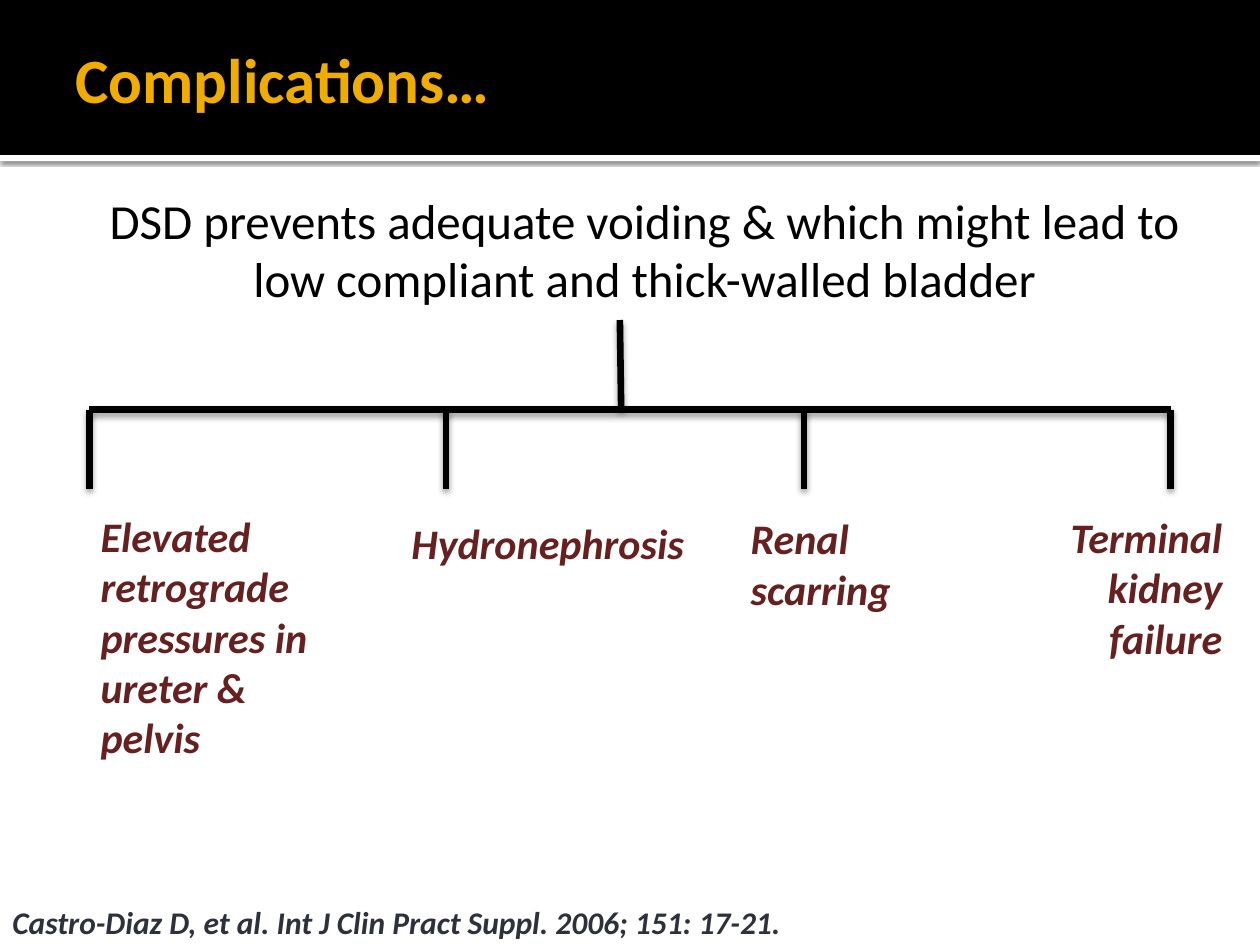
from lxml.etree import SubElement
from pptx import Presentation
from pptx.dml.color import RGBColor
from pptx.enum.shapes import MSO_CONNECTOR, MSO_SHAPE
from pptx.enum.text import MSO_ANCHOR, PP_ALIGN
from pptx.oxml.ns import qn
from pptx.util import Inches, Pt

TITLE = "Complications…"
CAUSE = "DSD prevents adequate voiding & which might lead to low compliant and thick-walled bladder"
CITATION = "Castro-Diaz D, et al. Int J Clin Pract Suppl. 2006; 151: 17-21."
# text, box (left, top, width, height), alignment
OUTCOMES = [
    ("Elevated retrograde pressures in ureter & pelvis", (0.2, 4, 2.36, 2.12), PP_ALIGN.LEFT),
    ("Hydronephrosis ", (2.56, 4.06, 3.15, 0.5), PP_ALIGN.CENTER),
    ("Renal scarring", (5.36, 4.02, 2.36, 0.91), PP_ALIGN.LEFT),
    ("Terminal kidney failure", (7.44, 4.01, 2.36, 1.31), PP_ALIGN.RIGHT),
]
BRANCH_LEFTS = [0.71, 3.54, 6.38, 9.29]
STEM_TOP, RAIL_TOP, BRANCH_BOTTOM = 2.54, 3.25, 3.88
OUTCOME_INDENT = 0.5

THEME = {
    "black": RGBColor.from_string("000000"),
    "white": RGBColor.from_string("FFFFFF"),
    "line_width": Pt(3.78),
    "title": {"size": Pt(36), "bold": True, "color": "F0AD00"},
    "cause": {"size": Pt(28), "color": "000000"},
    "outcome": {"size": Pt(24), "bold": True, "italic": True, "color": "672020"},
    "citation": {"size": Pt(18), "bold": True, "italic": True, "color": "2D313C"},
    # opacity in percent, blur and distance in points
    "rule_shadow": (60, 2.5, 0.8),
    "line_shadow": (38, 3.5, 2),
}


def inches(values):
    return [Inches(value) for value in values]


def add_shadow(shape, opacity, blur, distance):
    """Give the shape a black shadow that falls straight down."""
    effects = SubElement(shape._element.spPr, qn("a:effectLst"))
    shadow = SubElement(effects, qn("a:outerShdw"), {
        "blurRad": str(Pt(blur)), "dist": str(Pt(distance)),
        "dir": "5400000", "rotWithShape": "0"})
    color = SubElement(shadow, qn("a:srgbClr"), val="000000")
    SubElement(color, qn("a:alpha"), val=str(opacity * 1000))


def write_text(shape, text, style, alignment=PP_ALIGN.LEFT, anchor=MSO_ANCHOR.TOP):
    frame = shape.text_frame
    frame.word_wrap = True
    frame.vertical_anchor = anchor
    paragraph = frame.paragraphs[0]
    paragraph.alignment = alignment
    run = paragraph.add_run()
    run.text = text
    run.font.name = "Calibri"
    for name, value in THEME[style].items():
        if name == "color":
            run.font.color.rgb = RGBColor.from_string(value)
        else:
            setattr(run.font, name, value)
    return paragraph


def add_bar(slide, box, color):
    bar = slide.shapes.add_shape(MSO_SHAPE.RECTANGLE, *inches(box))
    bar.fill.solid()
    bar.fill.fore_color.rgb = color
    bar.line.fill.background()
    return bar


def add_header(slide):
    rule = add_bar(slide, (0, 1.23, 10, 0.05), THEME["white"])
    add_shadow(rule, *THEME["rule_shadow"])
    band = add_bar(slide, (0, 0, 10, 1.23), THEME["black"])
    band.shadow.inherit = False

    title = slide.shapes.title
    title.left, title.top, title.width, title.height = inches((0.5, 0.17, 9, 0.9))
    frame = title.text_frame
    frame.margin_left = Inches(0.1)
    frame.margin_right = frame.margin_top = frame.margin_bottom = Inches(0.05)
    write_text(title, TITLE, "title", anchor=MSO_ANCHOR.MIDDLE)
    band._element.addnext(title._element)  # bring the title in front of the band


def add_tree(slide):
    stem = (4.92, STEM_TOP, 4.93, RAIL_TOP)
    rail = (BRANCH_LEFTS[0], RAIL_TOP, BRANCH_LEFTS[-1], RAIL_TOP)
    branches = [(left, RAIL_TOP, left, BRANCH_BOTTOM) for left in BRANCH_LEFTS]
    tree = slide.shapes.add_group_shape()
    for ends in [stem, rail, *branches]:
        connector = tree.shapes.add_connector(MSO_CONNECTOR.STRAIGHT, *inches(ends))
        connector.line.color.rgb = THEME["black"]
        connector.line.width = THEME["line_width"]
        add_shadow(connector, *THEME["line_shadow"])


def main():
    presentation = Presentation()
    presentation.slide_width, presentation.slide_height = inches((10, 7.5))
    slide = presentation.slides.add_slide(presentation.slide_layouts[5])
    add_header(slide)

    cause = slide.shapes.add_textbox(*inches((0.51, 1.46, 9.21, 1.04)))
    write_text(cause, CAUSE, "cause", PP_ALIGN.CENTER)
    add_tree(slide)

    for text, box, alignment in OUTCOMES:
        outcome = slide.shapes.add_textbox(*inches(box))
        paragraph = write_text(outcome, text, "outcome", alignment)
        paragraph.level = 1
        properties = paragraph._p.get_or_add_pPr()
        properties.set("marL", str(Inches(OUTCOME_INDENT)))
        properties.set("indent", "0")

    citation = slide.shapes.add_textbox(*inches((0, 7.14, 10, 0.36)))
    write_text(citation, CITATION, "citation", anchor=MSO_ANCHOR.MIDDLE)
    presentation.save("out.pptx")


if __name__ == "__main__":
    main()
